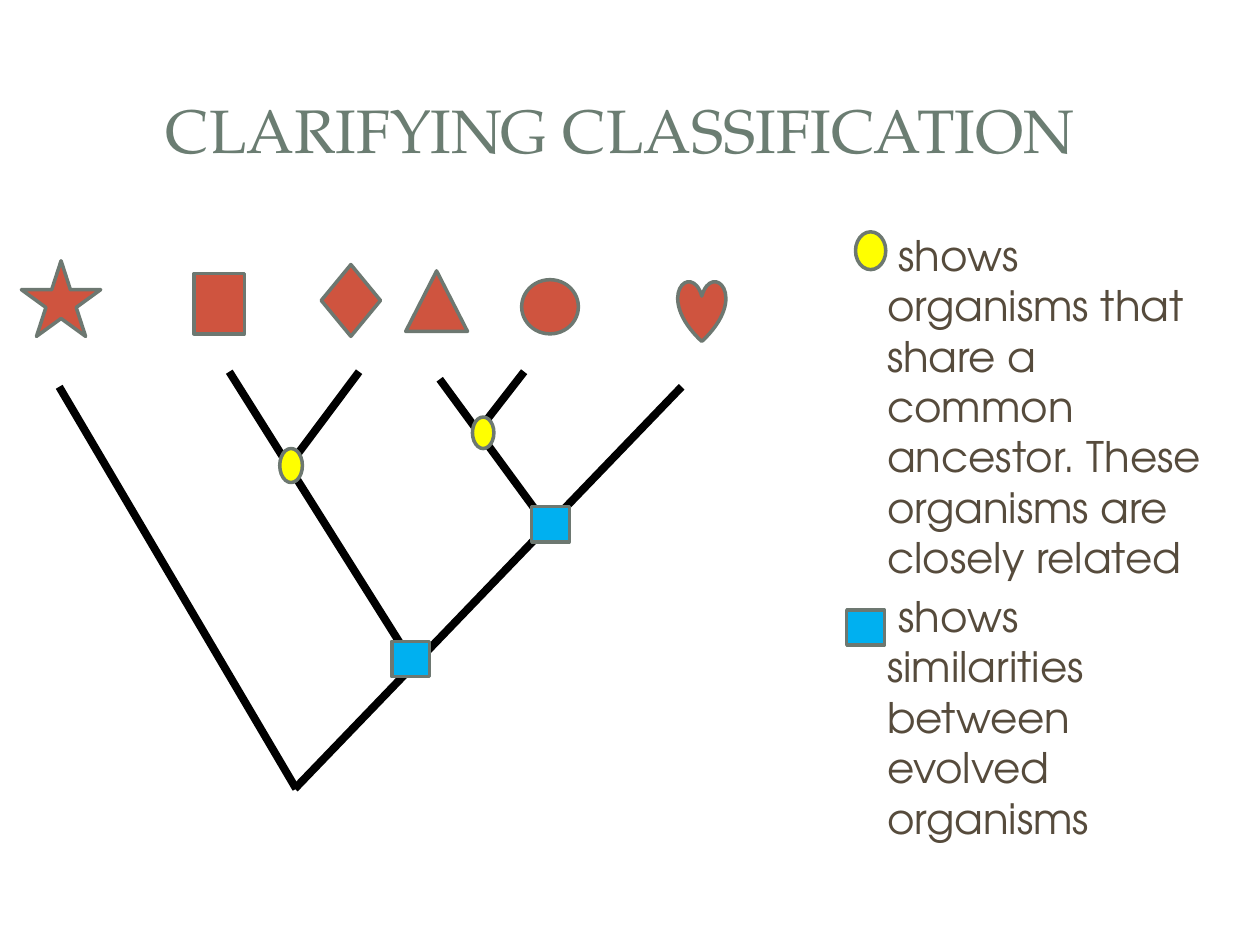
from lxml.etree import SubElement
from pptx import Presentation
from pptx.dml.color import RGBColor
from pptx.enum.shapes import MSO_CONNECTOR as Connector, MSO_SHAPE as Shape
from pptx.enum.text import MSO_ANCHOR as Anchor, MSO_AUTO_SIZE as AutoSize, PP_ALIGN as Align
from pptx.oxml.ns import qn
from pptx.util import Inches, Pt

COLORS = {
    "title": "6B7D72", "body": "564B3C", "bullet": "93A299", "branch": "000000",
    "organism": "CF543F", "ancestor": "FFFF00", "similarity": "00B0F0", "outline": "6D7871",
}
TITLE_FORMAT = {"name": "TeX Gyre Pagella", "size": Pt(35)}
BODY_FORMAT = {"name": "TeX Gyre Adventor", "size": Pt(24)}

# Boxes are left, top, width, height in inches
TITLE_BOX = (0.47, 0.45, 9.03, 1.14)
TREE_BOX = (0.1, 2, 5.7, 4.3)
LEGEND_BOX = (6.56, 1.77, 3.21, 5.52)

# Positions below are relative to the box of their region
BRANCHES = [
    ((2.24, 4.26), (5.31, 1.07)),
    ((3.16, 3.24), (1.72, 0.95)),
    ((4.24, 2.17), (3.39, 1.01)),
    ((3.68, 1.44), (4.06, 0.95)),
    ((2.19, 1.7), (2.75, 0.95)),
    ((2.25, 4.26), (0.37, 1.07)),
]
TREE_MARKS = [
    (Shape.OVAL, "organism", (4.04, 0.22, 0.45, 0.43)),
    (Shape.RECTANGLE, "organism", (1.44, 0.17, 0.4, 0.48)),
    (Shape.STAR_5_POINT, "organism", (0.07, 0.07, 0.63, 0.6)),
    (Shape.ISOSCELES_TRIANGLE, "organism", (3.12, 0.15, 0.49, 0.48)),
    (Shape.DIAMOND, "organism", (2.45, 0.1, 0.47, 0.57)),
    (Shape.HEART, "organism", (5.28, 0.23, 0.38, 0.48)),
    (Shape.OVAL, "ancestor", (3.65, 1.31, 0.17, 0.25)),
    (Shape.OVAL, "ancestor", (2.12, 1.56, 0.18, 0.27)),
    (Shape.RECTANGLE, "similarity", (4.12, 2.02, 0.3, 0.28)),
    (Shape.RECTANGLE, "similarity", (3.01, 3.09, 0.3, 0.28)),
]
LEGEND_MARKS = [
    (Shape.OVAL, "ancestor", (0.23, 0.07, 0.24, 0.3)),
    (Shape.RECTANGLE, "similarity", (0.16, 3.07, 0.3, 0.28)),
]
LEGEND_TEXTS = [
    " shows organisms that share a common ancestor. These organisms are closely related",
    " shows similarities between evolved organisms",
]


def color(name):
    return RGBColor.from_string(COLORS[name])


def place(shape, box):
    for name, value in zip(("left", "top", "width", "height"), box):
        setattr(shape, name, Inches(value))


def write(paragraph, text, format_values, color_name):
    run = paragraph.add_run()
    run.text = text
    for name, value in format_values.items():
        setattr(run.font, name, value)
    run.font.color.rgb = color(color_name)


def add_mark(slide, region, kind, color_name, box):
    left, top, width, height = box
    shape = slide.shapes.add_shape(
        kind, Inches(region[0] + left), Inches(region[1] + top), Inches(width), Inches(height))
    shape.shadow.inherit = False
    shape.fill.solid()
    shape.fill.fore_color.rgb = color(color_name)
    shape.line.color.rgb = color("outline")
    shape.line.width = Pt(2)


def add_branch(slide, region, start, end):
    points = [Inches(origin + offset) for point in (start, end)
              for origin, offset in zip(region, point)]
    branch = slide.shapes.add_connector(Connector.STRAIGHT, *points)
    branch.line.color.rgb = color("branch")
    branch.line.width = Pt(4.5)
    SubElement(branch._element.spPr, qn("a:effectLst"))


def add_title(slide, box):
    title = slide.shapes.title
    place(title, box)
    frame = title.text_frame
    frame.auto_size = AutoSize.NONE
    frame.vertical_anchor = Anchor.MIDDLE
    frame.paragraphs[0].alignment = Align.CENTER
    write(frame.paragraphs[0], "CLARIFYING CLASSIFICATION ", TITLE_FORMAT, "title")


def add_legend(slide, box):
    body = slide.placeholders[1]
    place(body, box)
    frame = body.text_frame
    frame.auto_size = AutoSize.NONE
    for index, text in enumerate(LEGEND_TEXTS):
        paragraph = frame.add_paragraph() if index else frame.paragraphs[0]
        write(paragraph, text, BODY_FORMAT, "body")
        # Hanging indent and bullet colour
        properties = paragraph._p.get_or_add_pPr()
        properties.set("marL", str(Inches(0.38)))
        properties.set("indent", str(Inches(-0.25)))
        bullet_color = SubElement(properties, qn("a:buClr"))
        SubElement(bullet_color, qn("a:srgbClr"), val=COLORS["bullet"])
        SubElement(properties, qn("a:buChar"), char="•")
    for mark in LEGEND_MARKS:
        add_mark(slide, box, *mark)


def add_tree(slide, box):
    for start, end in BRANCHES:
        add_branch(slide, box, start, end)
    for mark in TREE_MARKS:
        add_mark(slide, box, *mark)


def main():
    presentation = Presentation()
    presentation.slide_width = Inches(10)
    presentation.slide_height = Inches(7.5)
    slide = presentation.slides.add_slide(presentation.slide_layouts[1])
    add_title(slide, TITLE_BOX)
    add_legend(slide, LEGEND_BOX)
    add_tree(slide, TREE_BOX)
    presentation.save("out.pptx")


if __name__ == "__main__":
    main()
